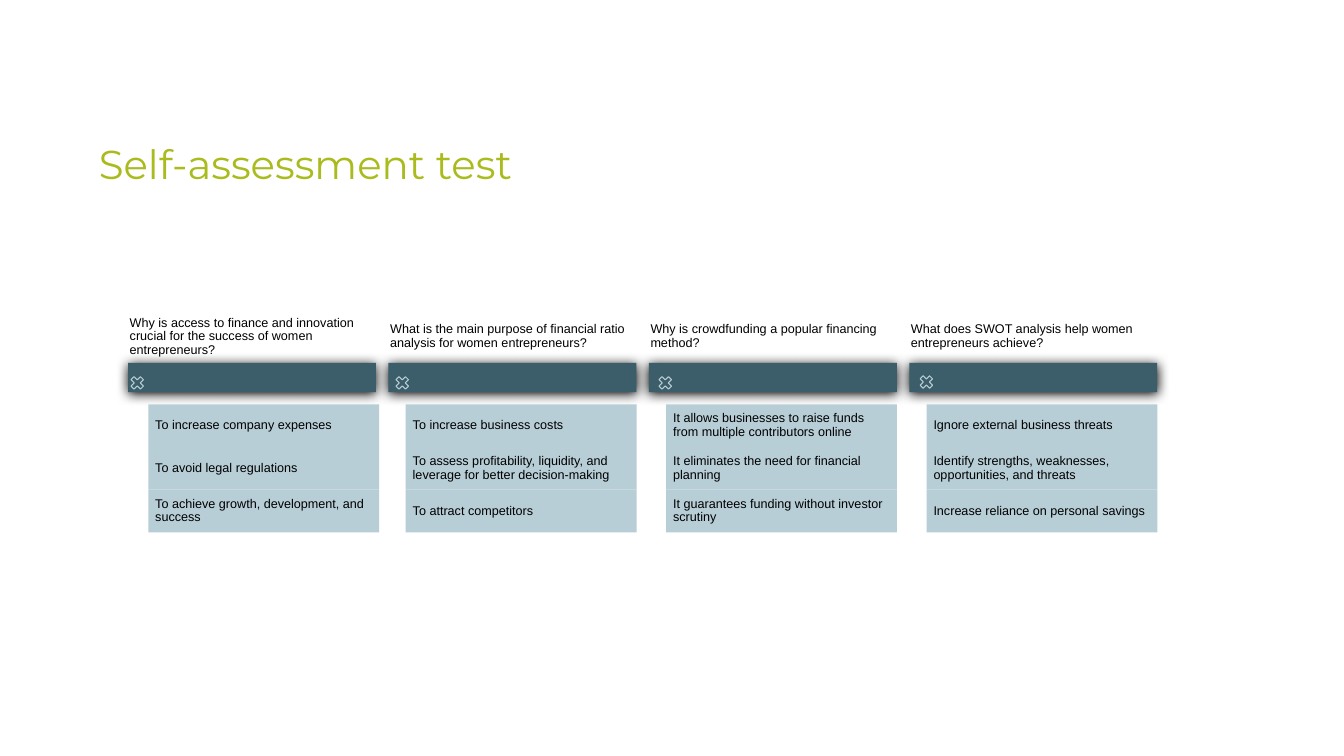
"""Build the self-assessment slide with four multiple-choice questions."""
from dataclasses import dataclass

from lxml import etree
from pptx import Presentation
from pptx import presentation as pres
from pptx import slide as sl
from pptx.dml import color
from pptx.enum import shapes, text
from pptx.oxml import ns
from pptx.shapes import autoshape
from pptx.text import text as txt
from pptx.util import Pt


@dataclass(frozen=True)
class Theme:
    title_color: color.RGBColor = color.RGBColor.from_string("AABB1D")
    bar_color: color.RGBColor = color.RGBColor.from_string("3C5D6A")
    answer_color: color.RGBColor = color.RGBColor.from_string("B8CED6")
    text_color: color.RGBColor = color.RGBColor.from_string("000000")
    title_font: str = "Montserrat"
    body_font: str = "Arial"
    title_size: float = 28.8
    body_size: float = 9


@dataclass(frozen=True)
class Box:
    left: float
    top: float
    width: float
    height: float


@dataclass(frozen=True)
class Question:
    prompt: str
    answers: tuple[str, str, str]
    cross_offset: float
    cross_top: float = 267
    answer_offset: float = 12.3


THEME = Theme()
FIRST_LEFT, COLUMN_PITCH, BAR_WIDTH = 91.5, 186, 177.1
PROMPT_TOP, PROMPT_HEIGHT = 221.8, 37.4
BAR_TOP, BAR_HEIGHT = 259.2, 20.9
ANSWER_TOP, ANSWER_WIDTH, ANSWER_PITCH = 288.8, 164.9, 30.5
CROSS_SIZE = 13

QUESTIONS = (
    Question(
        "Why is access to finance and innovation crucial for the success of women entrepreneurs?",
        ("To increase company expenses", "To avoid legal regulations",
         "To achieve growth, development, and success"),
        cross_offset=0, answer_offset=14.4),
    Question(
        "What is the main purpose of financial ratio analysis for women entrepreneurs?",
        ("To increase business costs",
         "To assess profitability, liquidity, and leverage for better decision-making",
         "To attract competitors"),
        cross_offset=3.3),
    Question(
        "Why is crowdfunding a popular financing method?",
        ("It allows businesses to raise funds from multiple contributors online",
         "It eliminates the need for financial planning",
         "It guarantees funding without investor scrutiny"),
        cross_offset=5.2),
    Question(
        "What does SWOT analysis help women entrepreneurs achieve?",
        ("Ignore external business threats",
         "Identify strengths, weaknesses, opportunities, and threats",
         "Increase reliance on personal savings"),
        cross_offset=5.7, cross_top=266.4),
)


def lengths(box: Box) -> tuple[Pt, Pt, Pt, Pt]:
    return Pt(box.left), Pt(box.top), Pt(box.width), Pt(box.height)


def write(frame: txt.TextFrame, words: str, font: str, size: float,
          ink: color.RGBColor, margins: tuple[float, float],
          anchor: text.MSO_ANCHOR = text.MSO_ANCHOR.MIDDLE) -> None:
    frame.word_wrap = True
    frame.auto_size = text.MSO_AUTO_SIZE.NONE
    frame.vertical_anchor = anchor
    frame.margin_left = frame.margin_right = Pt(margins[0])
    frame.margin_top = frame.margin_bottom = Pt(margins[1])
    paragraph = frame.paragraphs[0]
    paragraph.alignment = text.PP_ALIGN.LEFT
    paragraph.line_spacing = 0.9
    paragraph.space_before = Pt(0)
    run = paragraph.add_run()
    run.text = words
    run.font.name = font
    run.font.size = Pt(size)
    run.font.color.rgb = ink


def add_block(slide: sl.Slide, box: Box, fill: color.RGBColor) -> autoshape.Shape:
    shape = slide.shapes.add_shape(shapes.MSO_SHAPE.RECTANGLE, *lengths(box))
    shape.shadow.inherit = False
    shape.fill.solid()
    shape.fill.fore_color.rgb = fill
    shape.line.fill.background()
    return shape


def add_bar(slide: sl.Slide, box: Box) -> None:
    bar = add_block(slide, box, THEME.bar_color)
    effects = bar.element.spPr.find(ns.qn("a:effectLst"))
    shadow = etree.SubElement(
        effects, ns.qn("a:outerShdw"), blurRad=str(int(Pt(8.5))),
        dist=str(int(Pt(1))), dir="5400000", algn="ctr", rotWithShape="0")
    etree.SubElement(shadow, ns.qn("a:srgbClr"), val=str(THEME.text_color))


def add_cross(slide: sl.Slide, box: Box) -> None:
    cross = slide.shapes.add_shape(shapes.MSO_SHAPE.MATH_MULTIPLY, *lengths(box))
    cross.shadow.inherit = False
    cross.adjustments[0] = 0.235
    cross.fill.background()
    cross.line.color.rgb = THEME.answer_color
    cross.line.width = Pt(0.75)


def add_question(slide: sl.Slide, question: Question, left: float) -> None:
    add_bar(slide, Box(left, BAR_TOP, BAR_WIDTH, BAR_HEIGHT))
    add_cross(slide, Box(left + question.cross_offset, question.cross_top,
                         CROSS_SIZE, CROSS_SIZE))
    prompt = slide.shapes.add_textbox(
        *lengths(Box(left, PROMPT_TOP, BAR_WIDTH, PROMPT_HEIGHT)))
    write(prompt.text_frame, question.prompt, THEME.body_font, THEME.body_size,
          THEME.text_color, (1.2, 0.8))
    for row, words in enumerate(question.answers):
        box = Box(left + question.answer_offset, ANSWER_TOP + row * ANSWER_PITCH,
                  ANSWER_WIDTH, ANSWER_PITCH)
        answer = add_block(slide, box, THEME.answer_color)
        write(answer.text_frame, words, THEME.body_font, THEME.body_size,
              THEME.text_color, (5, 5))


def add_title(slide: sl.Slide, words: str, box: Box) -> None:
    title = slide.shapes.title
    title.left, title.top, title.width, title.height = lengths(box)
    write(title.text_frame, words, THEME.title_font, THEME.title_size,
          THEME.title_color, (7.2, 3.6), text.MSO_ANCHOR.TOP)


def main() -> None:
    presentation: pres.Presentation = Presentation()
    presentation.slide_width, presentation.slide_height = Pt(960), Pt(540)
    slide = presentation.slides.add_slide(presentation.slide_layouts[5])
    add_title(slide, "Self-assessment test", Box(63.4, 100, 797.8, 41))
    for column, question in enumerate(QUESTIONS):
        add_question(slide, question, FIRST_LEFT + column * COLUMN_PITCH)
    presentation.save("out.pptx")


if __name__ == "__main__":
    main()
